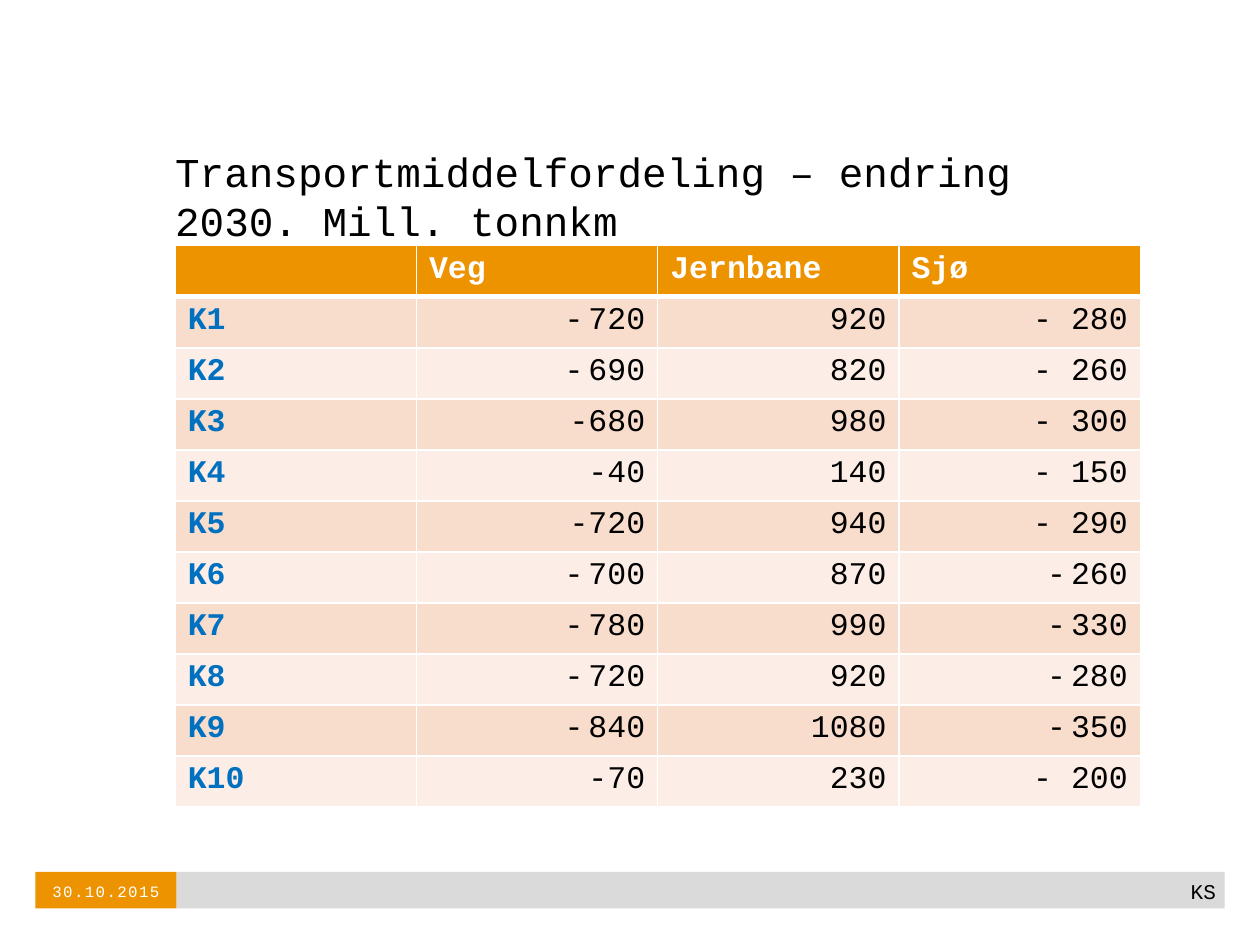
from lxml import etree
from pptx import Presentation
from pptx.dml.color import RGBColor
from pptx.enum.shapes import MSO_SHAPE
from pptx.enum.text import MSO_ANCHOR, PP_ALIGN
from pptx.oxml.ns import qn
from pptx.util import Inches, Pt

RECT = MSO_SHAPE.RECTANGLE
TOP, MIDDLE = MSO_ANCHOR.TOP, MSO_ANCHOR.MIDDLE
LEFT, CENTER, RIGHT = PP_ALIGN.LEFT, PP_ALIGN.CENTER, PP_ALIGN.RIGHT
FONT = "Courier New"
COLORS = {"orange": "ED9300", "gray": "DADADA", "band": "F8DCCC", "light": "FCEEE7",
          "blue": "0070C0", "black": "000000", "white": "FFFFFF"}
W, H = 10, 7.5
HEADER = ["", "Veg", "Jernbane", "Sjø"]
BULLET = "• "
ROWS = [
    ["K1", "• 720", "920", "- 280"],
    ["K2", "• 690", "820", "- 260"],
    ["K3", "-680", "980", "- 300"],
    ["K4", "-40", "140", "- 150"],
    ["K5", "-720", "940", "- 290"],
    ["K6", "• 700", "870", "• 260"],
    ["K7", "• 780", "990", "• 330"],
    ["K8", "• 720", "920", "• 280"],
    ["K9", "• 840", "1080", "• 350"],
    ["K10", "-70", "230", "- 200"],
]


def color(name):
    return RGBColor.from_string(COLORS[name])


def inches(box):
    return [Inches(v) for v in box]


def add_dash(p):
    pPr = p._p.get_or_add_pPr()
    pPr.set("marL", str(Inches(0.19)))
    pPr.set("indent", str(-Inches(0.19)))
    etree.SubElement(pPr, qn("a:buFont")).set("typeface", FONT)
    etree.SubElement(pPr, qn("a:buChar")).set("char", "-")


def write(tf, text, size=18, fill="black", bold=False, align=LEFT, track=None):
    p = tf.paragraphs[0]
    p.alignment = align
    if text.startswith(BULLET):
        add_dash(p)
        text = text[len(BULLET):]
    r = p.add_run()
    r.text = text
    r.font.name, r.font.size, r.font.bold = FONT, Pt(size), bold
    r.font.color.rgb = color(fill)
    if track:
        r._r.get_or_add_rPr().set("spc", str(int(track * 100)))


def add_text(s, box, text, anchor=TOP, **fmt):
    tf = s.shapes.add_textbox(*inches(box)).text_frame
    tf.word_wrap = True
    tf.vertical_anchor = anchor
    tf.margin_left = tf.margin_right = tf.margin_top = tf.margin_bottom = 0
    write(tf, text, **fmt)


def add_bar(s, box, fill):
    sp = s.shapes.add_shape(RECT, *inches(box))
    sp.shadow.inherit = False
    sp.fill.solid()
    sp.fill.fore_color.rgb = color(fill)
    sp.line.fill.background()


def style_cell(cell, fill, top=1, bottom=1):
    tcPr = cell._tc.get_or_add_tcPr()
    for side, width in zip("LRTB", (1, 1, top, bottom)):
        ln = etree.SubElement(tcPr, qn(f"a:ln{side}"), w=str(Pt(width)))
        solid = etree.SubElement(ln, qn("a:solidFill"))
        etree.SubElement(solid, qn("a:srgbClr")).set("val", COLORS["white"])
    cell.fill.solid()
    cell.fill.fore_color.rgb = color(fill)


def add_change_table(s, box):
    rows = [HEADER] + ROWS
    table = s.shapes.add_table(len(rows), len(HEADER), *inches(box)).table
    for i, values in enumerate(rows):
        for j, value in enumerate(values):
            cell = table.cell(i, j)
            if i == 0:
                style_cell(cell, "orange", bottom=3)
                fmt = {"fill": "white", "bold": True}
            else:
                style_cell(cell, "band" if i % 2 else "light", top=3 if i == 1 else 1)
                fmt = {"align": RIGHT} if j else {"fill": "blue", "bold": True}
            if value:
                write(cell.text_frame, value, **fmt)


def add_footer(s, box):
    x, y, w, h = box
    date_w = 1.12
    add_bar(s, (x + date_w, y, w - date_w, h), "gray")
    add_bar(s, (x, y, date_w, h), "orange")
    add_text(s, (x, y + 0.06, date_w, 0.19), "30.10.2015", anchor=MIDDLE,
             size=9, fill="white", align=CENTER, track=0.8)
    add_text(s, (x + 1.44, y + 0.05, w - 1.51, 0.19), "KS", size=12, align=RIGHT)


def main():
    prs = Presentation()
    prs.slide_width, prs.slide_height = Inches(W), Inches(H)
    s = prs.slides.add_slide(prs.slide_layouts[6])
    left, width = 0.139 * W, 0.766 * W
    add_text(s, (left, 1.16, width, 0.78),
             "Transportmiddelfordeling – endring 2030. Mill. tonnkm", size=23.4)
    add_change_table(s, (left, 1.95, width, 4.46))
    add_footer(s, (0.28, 6.92, 9.44, 0.29))
    prs.save("out.pptx")


if __name__ == "__main__":
    main()
